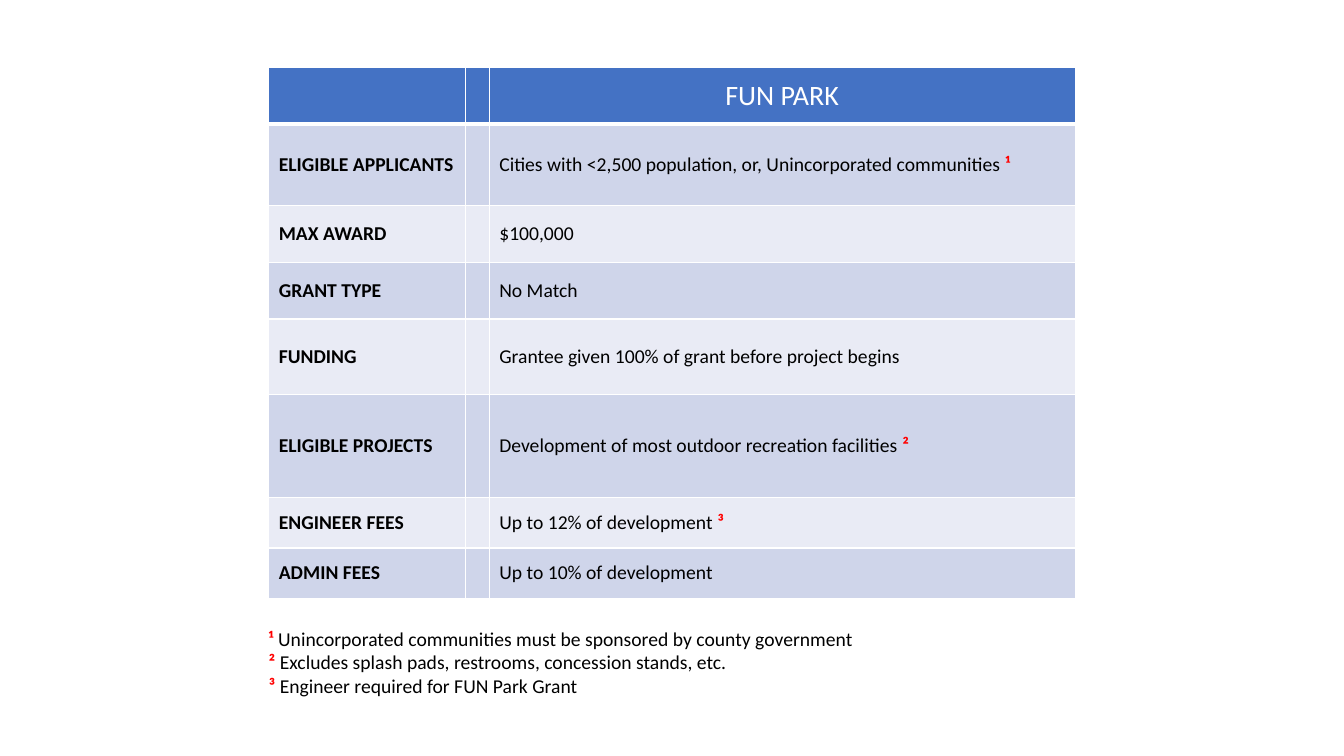
import pptx
import pptx.dml.color
import pptx.enum.text
import pptx.oxml
import pptx.oxml.ns
import pptx.util

PX = 9525
FONT = "Calibri"
WHITE, BLACK, RED = "FFFFFF", "000000", "FF0000"
HEADER_FILL, BANDS = "4472C4", ("CFD5EA", "E9EBF5")
COL_WIDTHS = (187, 23, 558)
ROW_HEIGHTS = (54, 78, 54, 54, 72, 98, 48, 48)
TITLE = "FUN PARK"
# label, value, footnote mark
RULES = (
    ("ELIGIBLE APPLICANTS", "Cities with <2,500 population, or, Unincorporated communities ", "¹"),
    ("MAX AWARD", "$100,000", ""),
    ("GRANT TYPE", "No Match", ""),
    ("FUNDING", "Grantee given 100% of grant before project begins", ""),
    ("ELIGIBLE PROJECTS", "Development of most outdoor recreation facilities ", "²"),
    ("ENGINEER FEES", "Up to 12% of development ", "³"),
    ("ADMIN FEES", "Up to 10% of development", ""),
)
FOOTNOTES = (
    ("¹ ", "Unincorporated communities must be sponsored by county government"),
    ("² ", "Excludes splash pads, restrooms, concession stands, etc."),
    ("³ ", "Engineer required for FUN Park Grant"),
)


def px(n):
    return pptx.util.Emu(n * PX)


def rgb(value):
    return pptx.dml.color.RGBColor.from_string(value)


def add_runs(p, size, *runs):
    """Each run is (text, colour, bold)."""
    p.font.size = pptx.util.Pt(size)
    p.font.name = FONT
    for text, color, bold in runs:
        r = p.add_run()
        r.text = text
        r.font.size = pptx.util.Pt(size)
        r.font.name = FONT
        r.font.bold = bold
        r.font.color.rgb = rgb(color)


def style_cell(cell, fill, bottom=1):
    """Set white borders (widths in points), fill and middle anchor."""
    cell.vertical_anchor = pptx.enum.text.MSO_ANCHOR.MIDDLE
    tc_pr = cell._tc.get_or_add_tcPr()
    ns = pptx.oxml.ns.nsdecls("a")
    for side, width in (("L", 1), ("R", 1), ("T", 1), ("B", bottom)):
        tc_pr.append(pptx.oxml.parse_xml(
            f'<a:ln{side} {ns} w="{width * 12700}"><a:solidFill>'
            f'<a:srgbClr val="{WHITE}"/></a:solidFill></a:ln{side}>'))
    cell.fill.solid()
    cell.fill.fore_color.rgb = rgb(fill)


def add_grant_table(slide, x, y):
    table = slide.shapes.add_table(
        len(ROW_HEIGHTS), len(COL_WIDTHS), px(x), px(y),
        px(sum(COL_WIDTHS)), px(sum(ROW_HEIGHTS))).table
    for col, width in zip(table.columns, COL_WIDTHS):
        col.width = px(width)
    for i, (row, height) in enumerate(zip(table.rows, ROW_HEIGHTS)):
        row.height = px(height)
        for cell in row.cells:
            if i == 0:
                style_cell(cell, HEADER_FILL, bottom=3)
            else:
                style_cell(cell, BANDS[(i - 1) % 2])

    p = table.cell(0, 2).text_frame.paragraphs[0]
    p.alignment = pptx.enum.text.PP_ALIGN.CENTER
    add_runs(p, 20, (TITLE, WHITE, False))
    for i, (label, value, mark) in enumerate(RULES, 1):
        add_runs(table.cell(i, 0).text_frame.paragraphs[0], 14, (label, BLACK, True))
        runs = [(value, BLACK, False)]
        if mark:
            runs.append((mark, RED, True))
        add_runs(table.cell(i, 2).text_frame.paragraphs[0], 14, *runs)


def add_footnotes(slide, x, y, w, h):
    tf = slide.shapes.add_textbox(px(x), px(y), px(w), px(h)).text_frame
    tf.word_wrap = True
    tf.margin_left = 0
    for i, (mark, note) in enumerate(FOOTNOTES):
        p = tf.add_paragraph() if i else tf.paragraphs[0]
        add_runs(p, 14, (mark, RED, True), (note, BLACK, False))


def main():
    prs = pptx.Presentation()
    prs.slide_width, prs.slide_height = px(1280), px(720)
    slide = prs.slides.add_slide(prs.slide_layouts[6])
    add_grant_table(slide, 256, 64)
    add_footnotes(slide, 256, 592, 760, 78)
    prs.save("out.pptx")


if __name__ == "__main__":
    main()
